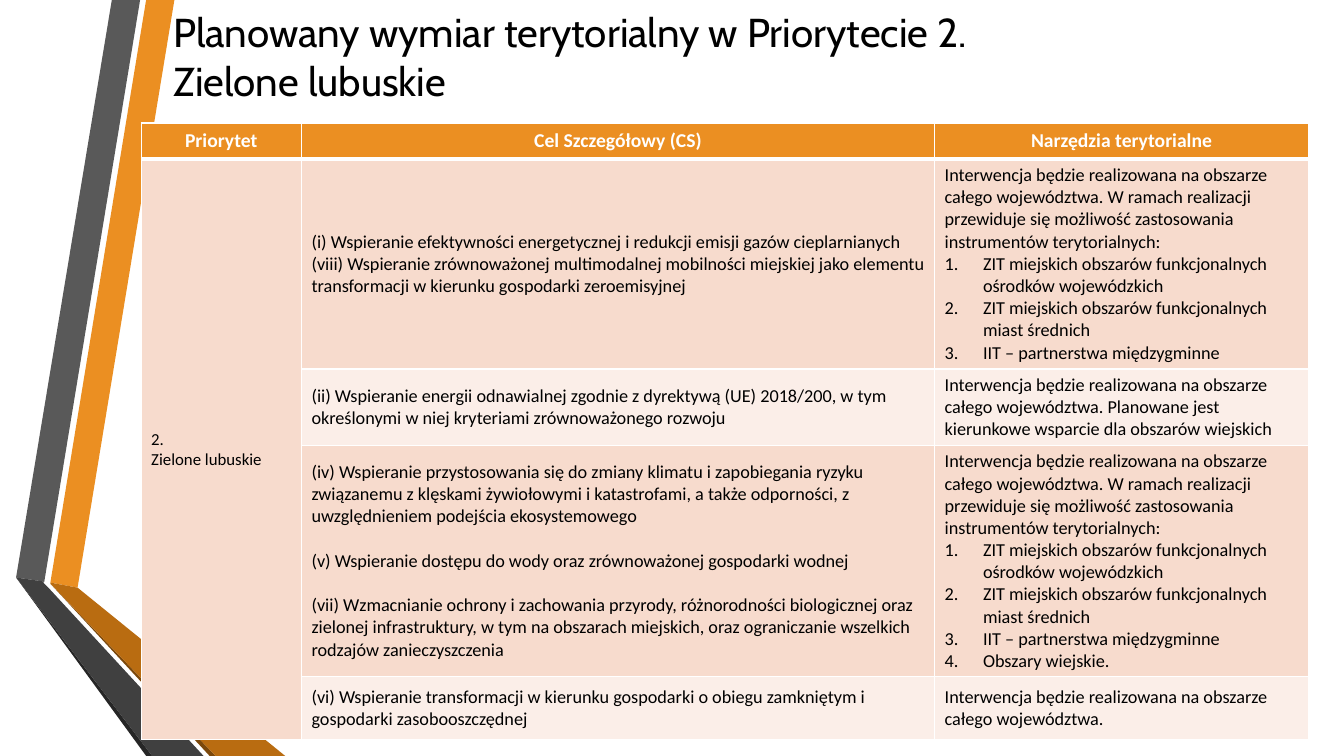
from dataclasses import dataclass

from lxml import etree
from pptx import Presentation
from pptx.dml.color import RGBColor
from pptx.enum.text import MSO_ANCHOR, PP_ALIGN
from pptx.oxml.ns import qn
from pptx.slide import Slide
from pptx.table import _Cell
from pptx.util import Emu, Pt

PX = 9144  # EMU per px, 100 px to the inch

COLORS = {
    "orange": "EB8F22",
    "dark_orange": "B96C11",
    "brown": "7B480B",
    "gray": "595959",
    "dark_gray": "404040",
    "near_black": "262626",
    "peach": "F7DBCD",
    "pale_peach": "FBEEE8",
    "white": "FFFFFF",
    "black": "000000",
}


@dataclass(frozen=True)
class Ribbon:
    color: str
    points: tuple[tuple[int, int], ...]


@dataclass(frozen=True)
class CellStyle:
    fill: str
    size: int = 13
    color: str = "black"
    bold: bool = False
    align: PP_ALIGN = PP_ALIGN.LEFT
    bottom_border: int = 1
    gap: int = 0


@dataclass(frozen=True)
class Goal:
    """One table row: specific goals and the territorial tools that serve them."""
    height: int
    fill: str
    goals: tuple[str, ...]
    intervention: str
    tools: tuple[str, ...] = ()
    gap: int = 0


RIBBONS = (
    Ribbon("orange", ((50, 578), (77, 583), (173, 0), (145, 0))),
    Ribbon("gray", ((139, 0), (111, 0), (16, 573), (44, 577))),
    Ribbon("near_black", ((16, 573), (145, 750), (151, 750))),
    Ribbon("brown", ((50, 579), (208, 750), (214, 750))),
    Ribbon("dark_orange", ((50, 579), (214, 750), (283, 750), (77, 583), (50, 578))),
    Ribbon("dark_gray", ((202, 750), (48, 583), (43, 578), (44, 577), (16, 573), (151, 750))),
)

HEADERS = ("Priorytet", "Cel Szczegółowy (CS)", "Narzędzia terytorialne")
HEADER_HEIGHT = 36
COLUMN_WIDTHS = (159, 628, 371)
PRIORITY = ("2.", "Zielone lubuskie")

WHOLE_REGION = "Interwencja będzie realizowana na obszarze całego województwa."
WITH_TOOLS = (
    f"{WHOLE_REGION} W ramach realizacji przewiduje się możliwość "
    "zastosowania instrumentów terytorialnych:"
)
SHARED_TOOLS = (
    "ZIT miejskich obszarów funkcjonalnych ośrodków wojewódzkich",
    "ZIT miejskich obszarów funkcjonalnych miast średnich",
    "IIT – partnerstwa międzygminne",
)

GOALS = (
    Goal(208, "peach", (
        "(i) Wspieranie efektywności energetycznej i redukcji emisji gazów cieplarnianych",
        "(viii) Wspieranie zrównoważonej multimodalnej mobilności miejskiej jako elementu "
        "transformacji w kierunku gospodarki zeroemisyjnej",
    ), WITH_TOOLS, SHARED_TOOLS),
    Goal(76, "pale_peach", (
        "(ii) Wspieranie energii odnawialnej zgodnie z dyrektywą (UE) 2018/200, w tym "
        "określonymi w niej kryteriami zrównoważonego rozwoju",
    ), f"{WHOLE_REGION} Planowane jest kierunkowe wsparcie dla obszarów wiejskich"),
    Goal(229, "peach", (
        "(iv) Wspieranie przystosowania się do zmiany klimatu i zapobiegania ryzyku "
        "związanemu z klęskami żywiołowymi i katastrofami, a także odporności, z "
        "uwzględnieniem podejścia ekosystemowego",
        "(v) Wspieranie dostępu do wody oraz zrównoważonej gospodarki wodnej",
        "(vii) Wzmacnianie ochrony i zachowania przyrody, różnorodności biologicznej oraz "
        "zielonej infrastruktury, w tym na obszarach miejskich, oraz ograniczanie wszelkich "
        "rodzajów zanieczyszczenia",
    ), WITH_TOOLS, (*SHARED_TOOLS, "Obszary wiejskie."), gap=16),
    Goal(63, "pale_peach", (
        "(vi) Wspieranie transformacji w kierunku gospodarki o obiegu zamkniętym i "
        "gospodarki zasobooszczędnej",
    ), WHOLE_REGION),
)


def px(length: int) -> Emu:
    return Emu(length * PX)


def rgb(name: str) -> RGBColor:
    return RGBColor.from_string(COLORS[name])


def add_ribbon(slide: Slide, ribbon: Ribbon) -> None:
    start, *rest = ribbon.points
    builder = slide.shapes.build_freeform(*start, scale=PX)
    builder.add_line_segments(rest, close=True)
    shape = builder.convert_to_shape()
    shape.shadow.inherit = False
    shape.fill.solid()
    shape.fill.fore_color.rgb = rgb(ribbon.color)
    shape.line.fill.background()


def add_title(slide: Slide) -> None:
    text_frame = slide.shapes.add_textbox(px(162), px(11), px(1126), px(89)).text_frame
    text_frame.word_wrap = True
    text_frame.vertical_anchor = MSO_ANCHOR.MIDDLE
    paragraph = text_frame.paragraphs[0]
    paragraph.text = "Planowany wymiar terytorialny w Priorytecie 2.\vZielone lubuskie"
    paragraph.font.name = "Cabin"
    paragraph.font.size = Pt(28.8)
    paragraph.font.color.rgb = rgb("black")


def set_borders(cell: _Cell, bottom: int) -> None:
    properties = cell._tc.get_or_add_tcPr()
    for tag, width in (("a:lnL", 1), ("a:lnR", 1), ("a:lnT", 1), ("a:lnB", bottom)):
        line = etree.SubElement(properties, qn(tag), w=str(Pt(width)))
        fill = etree.SubElement(line, qn("a:solidFill"))
        etree.SubElement(fill, qn("a:srgbClr"), val=COLORS["white"])


def fill_cell(cell: _Cell, style: CellStyle, texts: tuple[str, ...],
              numbered: tuple[str, ...] = ()) -> None:
    """Style a cell and write plain paragraphs followed by numbered ones."""
    set_borders(cell, style.bottom_border)
    cell.fill.solid()
    cell.fill.fore_color.rgb = rgb(style.fill)
    cell.vertical_anchor = MSO_ANCHOR.MIDDLE
    cell.text = "\n".join(texts + numbered)
    for index, paragraph in enumerate(cell.text_frame.paragraphs):
        paragraph.alignment = style.align
        if index and style.gap:
            paragraph.space_before = Pt(style.gap)
        if index >= len(texts):
            properties = paragraph._p.get_or_add_pPr()
            properties.set("marL", str(px(38)))
            properties.set("indent", str(px(-38)))
            etree.SubElement(properties, qn("a:buAutoNum"), type="arabicPeriod")
        paragraph.font.name = "Calibri"
        paragraph.font.size = Pt(style.size)
        paragraph.font.bold = style.bold
        paragraph.font.color.rgb = rgb(style.color)


def add_goal_table(slide: Slide) -> None:
    heights = (HEADER_HEIGHT, *(goal.height for goal in GOALS))
    table = slide.shapes.add_table(
        len(heights), len(COLUMN_WIDTHS), px(140), px(122),
        px(sum(COLUMN_WIDTHS)), px(sum(heights)),
    ).table
    for column, width in zip(table.columns, COLUMN_WIDTHS):
        column.width = px(width)
    for row, height in zip(table.rows, heights):
        row.height = px(height)

    header_style = CellStyle("orange", 14, "white", True, PP_ALIGN.CENTER, 3)
    for index, header in enumerate(HEADERS):
        fill_cell(table.cell(0, index), header_style, (header,))

    table.cell(1, 0).merge(table.cell(len(GOALS), 0))
    fill_cell(table.cell(1, 0), CellStyle("peach", 12), PRIORITY)
    for row_index, goal in enumerate(GOALS, start=1):
        fill_cell(table.cell(row_index, 1), CellStyle(goal.fill, gap=goal.gap), goal.goals)
        fill_cell(table.cell(row_index, 2), CellStyle(goal.fill),
                  (goal.intervention,), goal.tools)


def main() -> None:
    presentation = Presentation()
    presentation.slide_width, presentation.slide_height = px(1333), px(750)
    slide = presentation.slides.add_slide(presentation.slide_layouts[6])
    for ribbon in RIBBONS:
        add_ribbon(slide, ribbon)
    add_title(slide)
    add_goal_table(slide)
    presentation.save("out.pptx")


if __name__ == "__main__":
    main()
